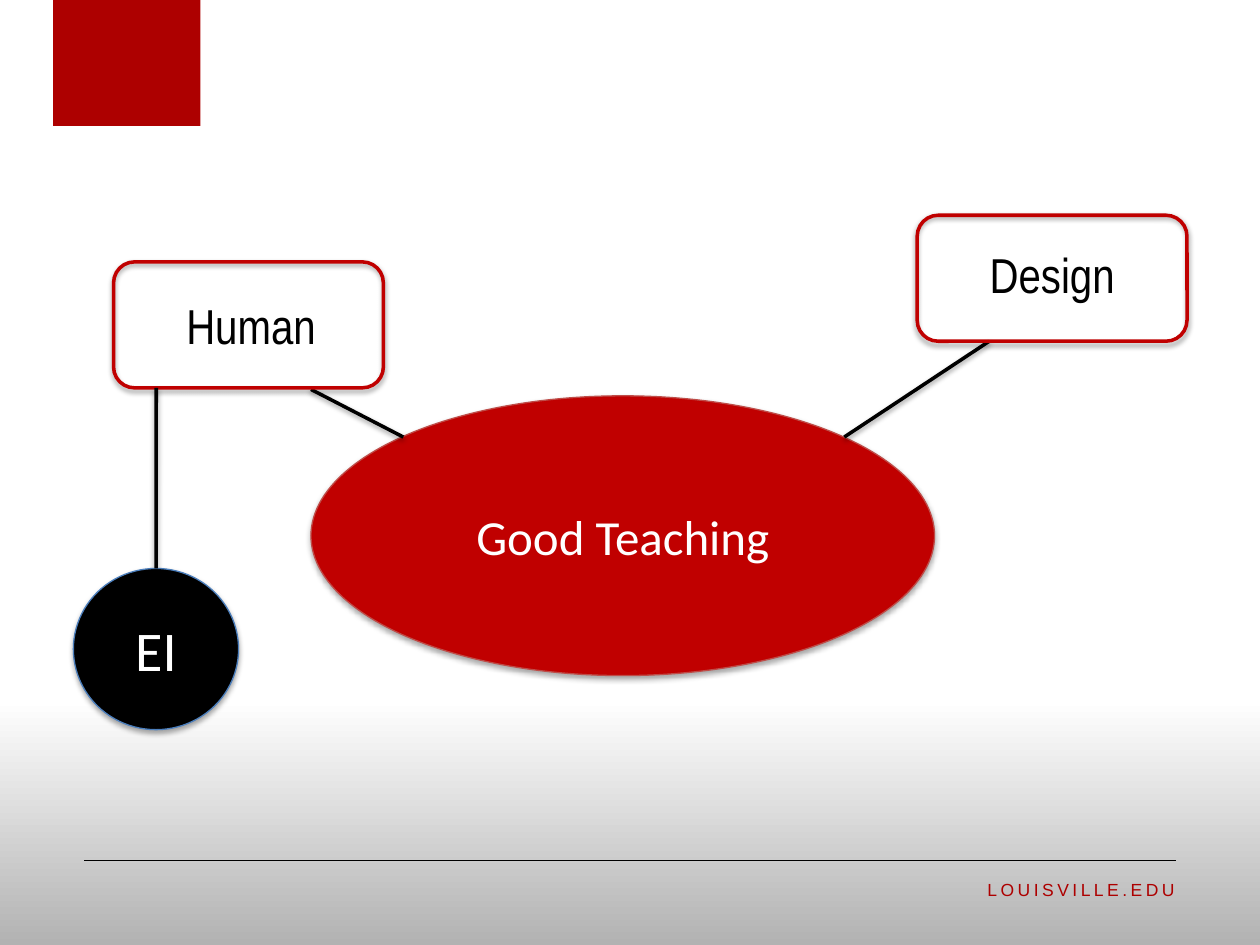
from lxml.etree import SubElement
from pptx import Presentation
from pptx.dml.color import RGBColor
from pptx.enum.shapes import MSO_CONNECTOR, MSO_SHAPE
from pptx.enum.text import MSO_ANCHOR, MSO_AUTO_SIZE, PP_ALIGN
from pptx.oxml.ns import qn
from pptx.util import Cm, Pt

BLACK = RGBColor(0x00, 0x00, 0x00)
WHITE = RGBColor(0xFF, 0xFF, 0xFF)
GRAY = RGBColor(0xB2, 0xB2, 0xB2)
CARDINAL = RGBColor(0xAD, 0x00, 0x00)
RED = RGBColor(0xC0, 0x00, 0x00)
ROSE = RGBColor(0xBF, 0x4C, 0x48)
BLUE = RGBColor(0x4B, 0x7E, 0xBC)

OVAL_SHADOW = (35, 1.8)
LINE_SHADOW = (38, 1.6)
BOX_WIDTH, BOX_HEIGHT, LABEL_HEIGHT = 5.44, 2.54, 1.45


class SlideBuilder:
    def __init__(self, slide):
        self.slide = slide

    def background(self):
        fill = self.slide.background.fill
        fill.gradient()
        fill.gradient_angle = 270
        for stop, position, color in zip(fill.gradient_stops, (0.74, 1), (WHITE, GRAY)):
            stop.position = position
            stop.color.rgb = color

    def effects(self, shape, shadow):
        effects = SubElement(shape._element.spPr, qn("a:effectLst"))
        if shadow:
            opacity, distance = shadow
            outer = SubElement(effects, qn("a:outerShdw"), blurRad=str(Pt(3.1)),
                               dist=str(Pt(distance)), dir="5400000", rotWithShape="0")
            color = SubElement(outer, qn("a:srgbClr"), val=str(BLACK))
            SubElement(color, qn("a:alpha"), val=str(opacity * 1000))

    def shape(self, kind, bounds, fill=None, line=None, width=0.75, shadow=None):
        shape = self.slide.shapes.add_shape(kind, *map(Cm, bounds))
        for format_, color in ((shape.fill, fill), (shape.line.fill, line)):
            if color is None:
                format_.background()
            else:
                format_.solid()
                format_.fore_color.rgb = color
        if line is not None:
            shape.line.width = Pt(width)
        self.effects(shape, shadow)
        return shape

    def text(self, shape, text, font, size, color, align=PP_ALIGN.CENTER,
             anchor=MSO_ANCHOR.MIDDLE):
        frame = shape.text_frame
        frame.word_wrap = True
        frame.vertical_anchor = anchor
        paragraph = frame.paragraphs[0]
        paragraph.text = text
        paragraph.alignment = align
        paragraph.font.name = font
        paragraph.font.size = Pt(size)
        paragraph.font.color.rgb = color
        return paragraph

    def oval(self, bounds, text, size, fill, line):
        shape = self.shape(MSO_SHAPE.OVAL, bounds, fill, line, shadow=OVAL_SHADOW)
        self.text(shape, text, "Calibri", size, WHITE)
        return shape

    def box(self, left, top, text, label_left, label_top):
        self.shape(MSO_SHAPE.ROUNDED_RECTANGLE, (left, top, BOX_WIDTH, BOX_HEIGHT),
                   line=RED, width=2, shadow=LINE_SHADOW)
        label = self.slide.shapes.add_textbox(
            *map(Cm, (label_left, label_top, BOX_WIDTH, LABEL_HEIGHT)))
        self.text(label, text, "Arial Narrow", 28, BLACK, anchor=MSO_ANCHOR.BOTTOM)
        label.text_frame.auto_size = MSO_AUTO_SIZE.SHAPE_TO_FIT_TEXT

    def line(self, points, width=2, shadow=LINE_SHADOW):
        line = self.slide.shapes.add_connector(MSO_CONNECTOR.STRAIGHT, *map(Cm, points))
        line.line.color.rgb = BLACK
        line.line.width = Pt(width)
        self.effects(line, shadow)
        return line

    def footer(self, bounds, text):
        footer = self.slide.shapes.add_textbox(*map(Cm, bounds))
        paragraph = self.text(footer, text, "Arial", 10, CARDINAL, PP_ALIGN.RIGHT,
                              MSO_ANCHOR.TOP)
        paragraph.runs[0]._r.get_or_add_rPr().set("spc", "200")


def main():
    presentation = Presentation()
    presentation.slide_width = Cm(25.4)
    presentation.slide_height = Cm(19.05)
    builder = SlideBuilder(presentation.slides.add_slide(presentation.slide_layouts[6]))

    builder.background()
    builder.line((23.7, 17.35, 1.7, 17.35), width=0.5, shadow=None)
    builder.shape(MSO_SHAPE.RECTANGLE, (1.07, 0, 2.97, 2.54), CARDINAL)
    builder.footer((18.21, 17.6, 5.72, 1.02), "LOUISVILLE.EDU")

    builder.oval((6.27, 7.98, 12.57, 5.64), "Good Teaching", 28, RED, ROSE)
    builder.line((17.02, 8.81, 19.94, 6.88))
    builder.line((8.13, 8.81, 6.27, 7.85))
    builder.box(18.49, 4.34, "Design", 18.49, 4.8)
    builder.box(2.29, 5.28, "Human", 2.34, 5.82)

    circle = builder.oval((1.48, 11.46, 3.33, 3.25), "EI", 32, BLACK, BLUE)
    stem = builder.line((3.15, 7.82, 3.15, 11.46))
    stem.end_connect(circle, 0)

    presentation.save("out.pptx")


if __name__ == "__main__":
    main()
